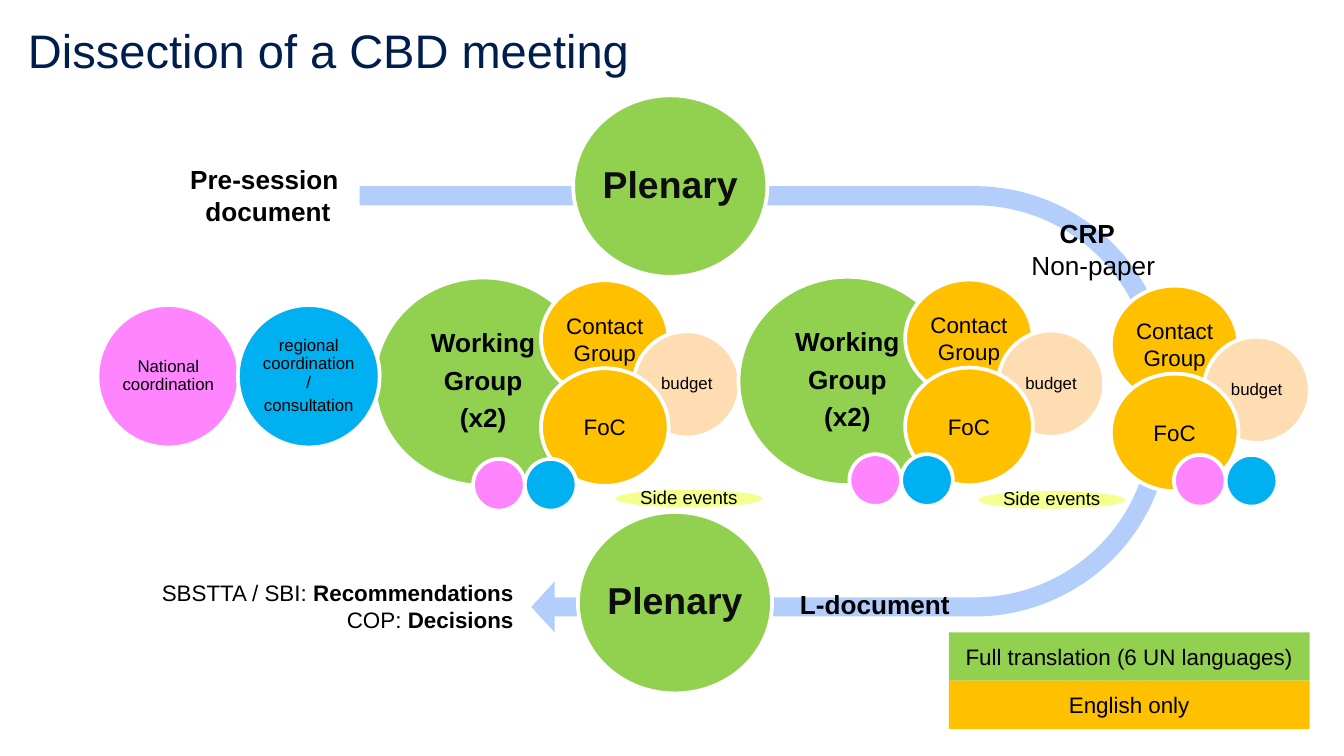
from pptx import Presentation
from pptx.dml.color import RGBColor
from pptx.enum.shapes import MSO_SHAPE
from pptx.enum.text import MSO_ANCHOR, PP_ALIGN
from pptx.util import Inches, Pt

CELL = 0.1
COLS, ROWS = 100, 56.25
BLACK = RGBColor(0x00, 0x00, 0x00)
NEAR_BLACK = RGBColor(0x0D, 0x0D, 0x0D)
WHITE = RGBColor(0xFF, 0xFF, 0xFF)
NAVY = RGBColor(0x00, 0x1E, 0x4D)
GREEN = RGBColor(0x92, 0xD0, 0x50)
ORANGE = RGBColor(0xFF, 0xC0, 0x00)
PEACH = RGBColor(0xFF, 0xDD, 0xB3)
PINK = RGBColor(0xFF, 0x85, 0xFF)
BLUE = RGBColor(0x00, 0xB0, 0xF0)
PALE_BLUE = RGBColor(0xB3, 0xCE, 0xFB)
LIME = RGBColor(0xF5, 0xFF, 0x8D)
OVAL_INSET = 0.15
TEXT_INSET = 1.8


def grid(*cells):
    """Turn grid cells into lengths."""
    return [Inches(c * CELL) for c in cells]


def set_all(obj, formats):
    """Set each named attribute of an object."""
    for name, value in formats.items():
        setattr(obj, name, value)


def write(tf, paragraphs, size, color=BLACK, bold=False, **layout):
    """Fill a text frame with paragraphs, each a string or (text, bold) runs."""
    for i, runs in enumerate(paragraphs):
        p = tf.paragraphs[0] if i == 0 else tf.add_paragraph()
        set_all(p, {"alignment": PP_ALIGN.CENTER, **layout})
        for text, strong in [(runs, bold)] if isinstance(runs, str) else runs:
            r = p.add_run()
            r.text = text
            set_all(r.font, {"name": "Arial", "size": Pt(size), "bold": strong})
            r.font.color.rgb = color


def add_label(s, at, paragraphs, size, wrap=False, anchor=MSO_ANCHOR.TOP, **style):
    """Add a text box."""
    tf = s.shapes.add_textbox(*grid(*at)).text_frame
    set_all(tf, {"word_wrap": wrap, "vertical_anchor": anchor})
    write(tf, paragraphs, size, **style)


def add_filled(shapes, kind, at, fill, outline=None):
    """Add a flat preset shape with an optional outline."""
    sp = shapes.add_shape(kind, *grid(*at))
    sp.shadow.inherit = False
    sp.fill.solid()
    sp.fill.fore_color.rgb = fill
    if outline is None:
        sp.line.fill.background()
    else:
        sp.line.color.rgb = outline
        sp.line.width = Pt(2)
    return sp


def add_oval(shapes, at, fill, paragraphs=(), size=9, outline=WHITE, spaced=True, **style):
    """Add an oval with centred text."""
    sp = add_filled(shapes, MSO_SHAPE.OVAL, at, fill, outline)
    side, = grid(max(0, TEXT_INSET - OVAL_INSET * at[2]))
    tf = sp.text_frame
    set_all(tf, {"word_wrap": True, "vertical_anchor": MSO_ANCHOR.MIDDLE,
                 "margin_left": side, "margin_right": side,
                 "margin_top": 0, "margin_bottom": 0})
    if spaced:
        style.update(line_spacing=0.9, space_after=Pt(round(size * 0.35)))
    write(tf, paragraphs, size, **style)


def add_cluster(s, x, y, working_group=True):
    """Add a group of contact, budget and FoC circles."""
    shapes = s.shapes.add_group_shape().shapes
    if working_group:
        add_oval(shapes, (x - 12.4, y - 0.2, 16.2, 15.5), GREEN,
                 ["Working", "Group", "(x2)"], 14, bold=True)
    add_oval(shapes, (x, y, 9.5, 8.75), ORANGE, ["Contact Group"], 12, spaced=False)
    add_oval(shapes, (x + 6.9, y + 3.8, 7.9, 7.9), PEACH, ["budget"])
    add_oval(shapes, (x, y + 6.55, 9.5, 8.75), ORANGE, ["FoC"], 12, spaced=False)


def add_dots(s, x, y):
    """Add the pair of small coordination circles."""
    shapes = s.shapes.add_group_shape().shapes
    for i, fill in enumerate((PINK, BLUE)):
        add_oval(shapes, (x + i * 3.85, y, 3.85, 3.85), fill)


def add_flow(s):
    """Add the U-turn arrow behind the meeting."""
    sp = add_filled(s.shapes, MSO_SHAPE.U_TURN_ARROW, (40.3, 0.3, 33.2, 60.3), PALE_BLUE)
    sp.rotation = 90
    for i, value in enumerate((0.043, 0.057, 0.052, 0.438, 0.788)):
        sp.adjustments[i] = value


def add_legend(s):
    """Add the translation key."""
    for i, (fill, text) in enumerate(((GREEN, "Full translation (6 UN languages)"),
                                      (ORANGE, "English only"))):
        at = (70.6, 47.05 + i * 3.6, 26.85, 3.6)
        sp = add_filled(s.shapes, MSO_SHAPE.RECTANGLE, at, fill)
        sp.text_frame.vertical_anchor = MSO_ANCHOR.MIDDLE
        write(sp.text_frame, [text], 12)


def main():
    """Build the slide."""
    prs = Presentation()
    prs.slide_width, prs.slide_height = grid(COLS, ROWS)
    s = prs.slides.add_slide(prs.slide_layouts[6])
    add_flow(s)
    add_label(s, (6.2, 42.6, 33, 5),
              [[("SBSTTA / SBI: ", False), ("Recommendations", True)],
               [("COP: ", False), ("Decisions", True)]],
              12, wrap=True, alignment=PP_ALIGN.RIGHT)
    for at, lines, bold in (((13.1, 11.7, 13.7, 5.7), ["Pre-session ", "document"], True),
                            ((77.8, 15.7, 6.2, 3.4), ["CRP"], True),
                            ((75.7, 18.1, 11.3, 3.4), ["Non-paper"], False),
                            ((58.5, 43.3, 13.2, 3.4), ["L-document"], True)):
        add_label(s, at, lines, 14, bold=bold)
    add_label(s, (1.1, 0.55, 93.2, 6.3), ["Dissection of a CBD meeting"], 25.2, wrap=True,
              anchor=MSO_ANCHOR.MIDDLE, color=NAVY, alignment=PP_ALIGN.LEFT)
    for x, y in ((42.65, 7.1), (43, 38.1)):
        add_oval(s.shapes, (x, y, 14.45, 13.5), GREEN, ["Plenary"], 20,
                 color=NEAR_BLACK, bold=True)
    add_oval(s.shapes, (7.25, 22.7, 10.55, 10.6), PINK, ["National coordination"])
    add_cluster(s, 40.25, 20.85)
    add_legend(s)
    add_oval(s.shapes, (17.7, 22.7, 10.55, 10.6), BLUE,
             ["regional coordination /", "consultation"])
    add_cluster(s, 67.35, 20.8)
    add_dots(s, 35.2, 34.15)
    add_dots(s, 63.2, 33.8)
    add_cluster(s, 82.65, 21.25, working_group=False)
    add_dots(s, 87.35, 33.85)
    for x, y in ((72.8, 36.55), (45.8, 36.45)):
        add_oval(s.shapes, (x, y, 10.9, 1.3), LIME, ["Side events"], 10, outline=None)
    prs.save("out.pptx")


if __name__ == "__main__":
    main()
